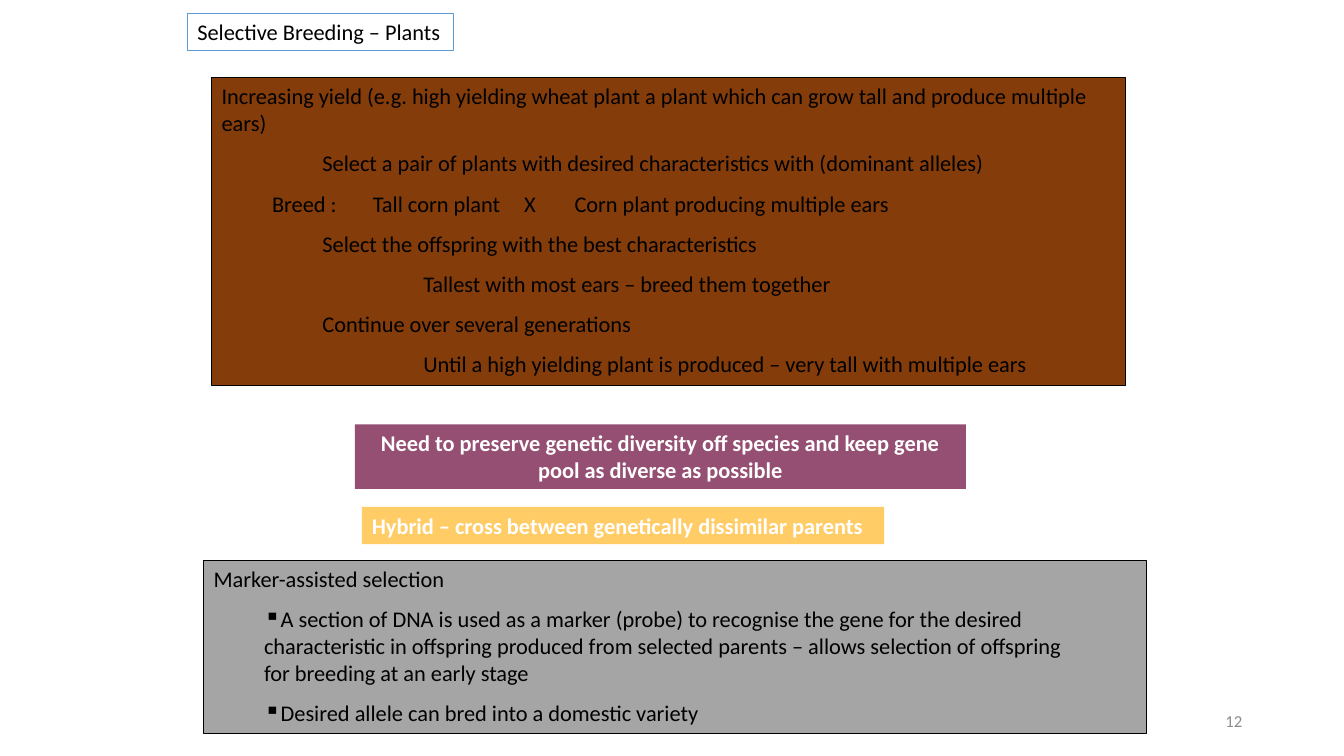
from pptx import Presentation
from pptx.dml.color import RGBColor
from pptx.enum.shapes import MSO_SHAPE
from pptx.enum.text import MSO_ANCHOR, PP_ALIGN
from pptx.util import Inches, Pt
from lxml.etree import SubElement
from pptx.oxml.ns import qn

HUES = {"ink": "000000", "white": "FFFFFF", "blue": "5B9BD5", "brown": "843C0B",
        "gold": "FFCC66", "plum": "954F72", "gray": "A5A5A5", "pale": "8C8C8C"}
GAP = 9.5
STOPS = (1, 2, 4, 4.51)

TITLE = [("Selective Breeding – Plants", {})]
YIELD = [
    ("Increasing yield (e.g. high yielding wheat plant a plant which can grow tall "
     "and produce multiple ears)", {}),
    ("Select a pair of plants with desired characteristics with (dominant alleles)",
     {"left": 1, "gap": GAP}),
    ("\tBreed :\tTall corn plant\tX\tCorn plant producing multiple ears",
     {"tabs": STOPS, "gap": GAP}),
    ("Select the offspring with the best characteristics", {"left": 1, "gap": GAP}),
    ("Tallest with most ears – breed them together", {"left": 2, "gap": GAP}),
    ("Continue over several generations", {"left": 1, "gap": GAP}),
    ("Until a high yielding plant is produced – very tall with multiple ears",
     {"left": 2, "gap": GAP}),
]
HYBRID = [("Hybrid – cross between genetically dissimilar parents", {})]
NEED = [("Need to preserve genetic diversity off species and keep gene pool as diverse "
         "as possible", {"align": PP_ALIGN.CENTER})]
MARKER = [
    ("Marker-assisted selection", {}),
    ("A section of DNA is used as a marker (probe) to recognise the gene for the desired",
     {"left": 0.5, "gap": GAP, "mark": "▪"}),
    ("characteristic in offspring produced from selected parents – allows selection of "
     "offspring", {"left": 0.5}),
    ("for breeding at an early stage", {"left": 0.5}),
    ("Desired allele can bred into a domestic variety",
     {"left": 0.5, "gap": GAP, "mark": "▪"}),
]
PAGE = [("12", {"align": PP_ALIGN.RIGHT})]

BOXES = [
    ((9.42, 6.95, 3, 0.4), PAGE, {"size": 12, "hue": "pale", "anchor": MSO_ANCHOR.MIDDLE}),
    ((1.86, 0.13, 2.64, 0.37), TITLE, {"line": "blue", "wrap": False}),
    ((2.1, 0.77, 9.06, 3.06), YIELD, {"fill": "brown", "line": "ink"}),
    ((3.59, 5.03, 5.18, 0.37), HYBRID,
     {"fill": "gold", "hue": "white", "bold": True, "wrap": False}),
    ((3.52, 4.21, 6.06, 0.64), NEED, {"fill": "plum", "hue": "white", "bold": True}),
    ((2.02, 5.56, 9.35, 1.72), MARKER, {"fill": "gray", "line": "ink"}),
]


def color(name):
    return RGBColor.from_string(HUES[name])


def write(para, text, size=16, hue="ink", bold=False, align=PP_ALIGN.LEFT,
          left=0, gap=0, mark=None, tabs=()):
    run = para.add_run()
    run.text = text
    font = run.font
    font.name, font.size, font.bold = "Calibri", Pt(size), bold
    font.color.rgb = color(hue)
    para.alignment = align
    para.space_before = Pt(gap)
    props = para._p.get_or_add_pPr()
    props.set("marL", str(Inches(left)))
    props.set("indent", "0")
    if mark:
        SubElement(props, qn("a:buChar"), char=mark)
    if tabs:
        stops = SubElement(props, qn("a:tabLst"))
        for stop in tabs:
            SubElement(stops, qn("a:tab"), pos=str(Inches(stop)), algn="l")


def box(slide, place, lines, fill=None, line=None, wrap=True,
        anchor=MSO_ANCHOR.TOP, **style):
    shape = slide.shapes.add_shape(MSO_SHAPE.RECTANGLE, *map(Inches, place))
    shape.shadow.inherit = False
    if fill:
        shape.fill.solid()
        shape.fill.fore_color.rgb = color(fill)
    else:
        shape.fill.background()
    if line:
        shape.line.color.rgb = color(line)
        shape.line.width = Pt(0.75)
    else:
        shape.line.fill.background()
    frame = shape.text_frame
    frame.word_wrap = wrap
    frame.vertical_anchor = anchor
    for i, (text, form) in enumerate(lines):
        para = frame.add_paragraph() if i else frame.paragraphs[0]
        write(para, text, **style, **form)


def main():
    deck = Presentation()
    deck.slide_width, deck.slide_height = Inches(13.33), Inches(7.5)
    slide = deck.slides.add_slide(deck.slide_layouts[6])
    for place, lines, style in BOXES:
        box(slide, place, lines, **style)
    deck.save("out.pptx")


if __name__ == "__main__":
    main()
